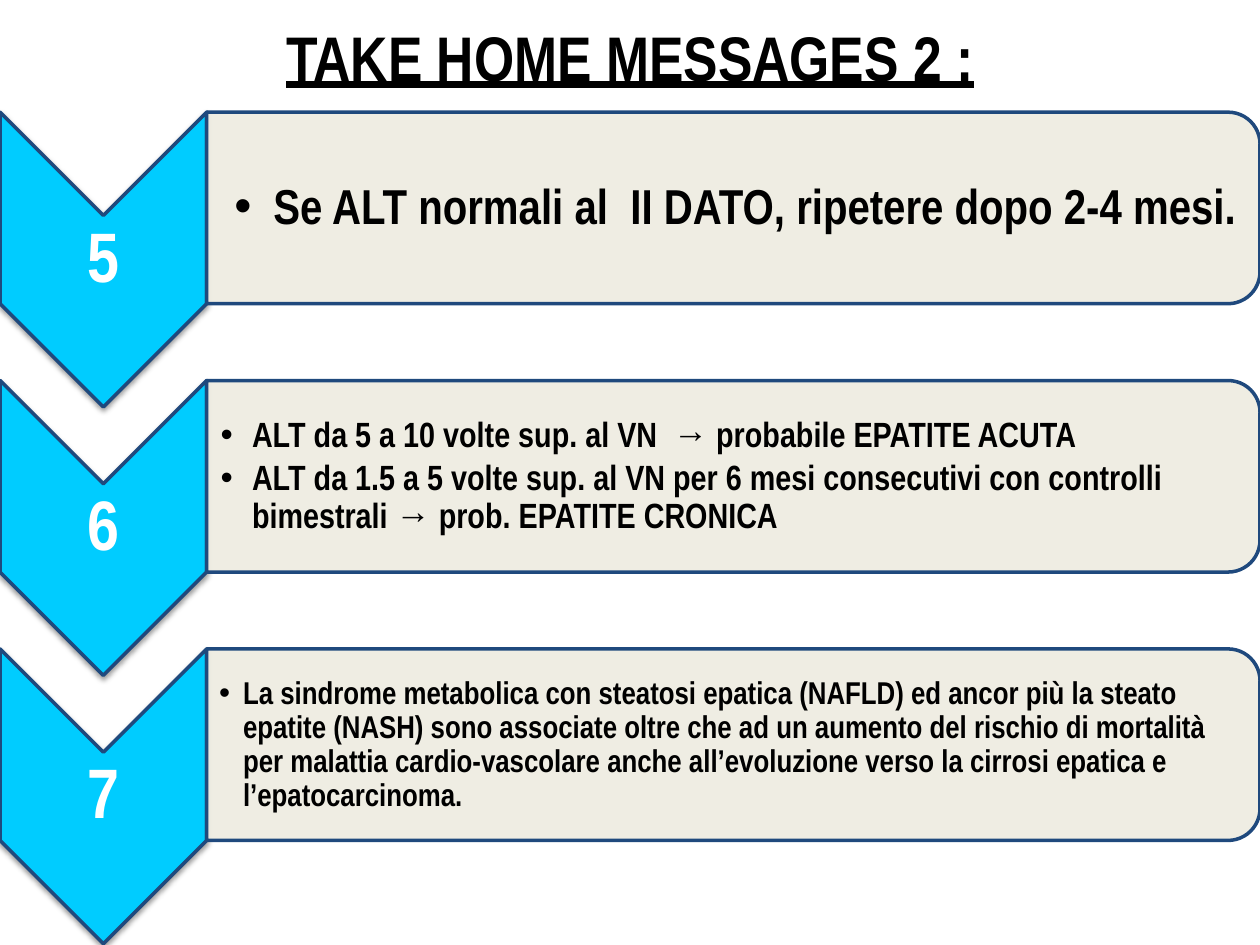
"""Build the take-home messages slide with numbered chevrons and text panels."""
import pptx
import pptx.dml.color
import pptx.enum.shapes
import pptx.enum.text
import pptx.oxml
import pptx.oxml.ns
import pptx.util
from pptx.util import Inches

TITLE = "TAKE HOME MESSAGES 2 :"
FONT = "Arial Narrow"
MESSAGES = [
    {"number": "5", "size": 28, "indent": 0.31, "inset": 0.22, "lines": [
        "Se ALT normali al  II DATO, ripetere dopo 2-4 mesi."]},
    {"number": "6", "size": 20, "indent": 0.25, "inset": 0.11, "lines": [
        "ALT da 5 a 10 volte sup. al VN  → probabile EPATITE ACUTA",
        "ALT da 1.5 a 5 volte sup. al VN per 6 mesi consecutivi con controlli "
        "bimestrali → prob. EPATITE CRONICA"]},
    {"number": "7", "size": 18, "indent": 0.19, "inset": 0.1, "lines": [
        "La sindrome metabolica con steatosi epatica (NAFLD) ed ancor più la steato "
        "epatite (NASH) sono associate oltre che ad un aumento del rischio di mortalità "
        "per malattia cardio-vascolare anche all’evoluzione verso la cirrosi epatica e "
        "l’epatocarcinoma."]},
]
TOP, PITCH = 0.89, 2.13
CHEVRON_W, CHEVRON_H = 1.64, 2.34
PANEL_W, PANEL_H = 8.36, 1.52
NS = pptx.oxml.ns.nsdecls("a")
SHADOW = (f'<a:effectLst {NS}><a:outerShdw blurRad="39400" dist="20300" dir="5400000" '
          'rotWithShape="0"><a:srgbClr val="000000"><a:alpha val="38000"/></a:srgbClr>'
          '</a:outerShdw></a:effectLst>')


def rgb(value):
    return pptx.dml.color.RGBColor.from_string(value)


def style_runs(p, size, color, underline=None):
    for r in p.runs:
        r.font.name, r.font.size = FONT, pptx.util.Pt(size)
        r.font.bold, r.font.underline = True, underline
        r.font.color.rgb = rgb(color)


def add_turned(slide, kind, left, top, width, height, fill):
    """Add a shape turned 90 degrees that fills the given upright box."""
    sp = slide.shapes.add_shape(
        kind, Inches(left + (width - height) / 2), Inches(top + (height - width) / 2),
        Inches(height), Inches(width))
    sp.rotation = 90
    sp.shadow.inherit = False
    sp.fill.solid()
    sp.fill.fore_color.rgb = rgb(fill)
    sp.line.color.rgb = rgb("1F497D")
    sp.line.width = pptx.util.Pt(2)
    return sp


def add_text(slide, box, lines, size, color, insets):
    tf = slide.shapes.add_textbox(*map(Inches, box)).text_frame
    tf.word_wrap = True
    tf.vertical_anchor = pptx.enum.text.MSO_ANCHOR.MIDDLE
    tf.margin_left, tf.margin_top, tf.margin_right, tf.margin_bottom = map(Inches, insets)
    tf.text = "\n".join(lines)
    for p in tf.paragraphs:
        p.line_spacing = 0.9
        style_runs(p, size, color)
    return tf


def add_bullet(p, indent, size):
    p.space_after = pptx.util.Pt(0.15 * size)
    pPr = p._p.get_or_add_pPr()
    pPr.set("marL", str(Inches(indent)))
    pPr.set("indent", str(-Inches(indent)))
    pPr.append(pptx.oxml.parse_xml(f'<a:buFont {NS} typeface="Arial"/>'))
    pPr.append(pptx.oxml.parse_xml(f'<a:buChar {NS} char="•"/>'))


def add_message(slide, top, message):
    shapes = pptx.enum.shapes.MSO_SHAPE
    chevron = add_turned(slide, shapes.CHEVRON, 0, top, CHEVRON_W, CHEVRON_H, "00CCFF")
    spPr = chevron._element.spPr
    spPr.replace(spPr.find(pptx.oxml.ns.qn("a:effectLst")), pptx.oxml.parse_xml(SHADOW))
    number = add_text(slide, (0, top + CHEVRON_W / 2, CHEVRON_W, 0.7),
                      [message["number"]], 40, "FFFFFF", [0.03] * 4)
    number.paragraphs[0].alignment = pptx.enum.text.PP_ALIGN.CENTER

    panel = add_turned(slide, shapes.ROUND_2_SAME_RECTANGLE, CHEVRON_W, top,
                       PANEL_W, PANEL_H, "EEECE1")
    color = panel._element.spPr.find(".//" + pptx.oxml.ns.qn("a:srgbClr"))
    color.append(pptx.oxml.parse_xml(f'<a:alpha {NS} val="90000"/>'))
    body = add_text(slide, (CHEVRON_W, top + 0.08, 8.29, 1.37), message["lines"],
                    message["size"], "000000", [message["inset"]] + [0.02] * 3)
    for p in body.paragraphs:
        add_bullet(p, message["indent"], message["size"])


def main():
    prs = pptx.Presentation()
    prs.slide_width, prs.slide_height = Inches(10), Inches(7.5)
    slide = prs.slides.add_slide(prs.slide_layouts[5])
    title = slide.shapes.title
    title.left, title.top, title.width, title.height = map(Inches, (0.5, 0, 9, 0.89))
    title.text_frame.text = TITLE
    title.text_frame.vertical_anchor = pptx.enum.text.MSO_ANCHOR.MIDDLE
    p = title.text_frame.paragraphs[0]
    p.alignment = pptx.enum.text.PP_ALIGN.CENTER
    style_runs(p, 36, "000000", underline=True)
    for i, message in enumerate(MESSAGES):
        add_message(slide, TOP + i * PITCH, message)
    prs.save("out.pptx")


if __name__ == "__main__":
    main()
